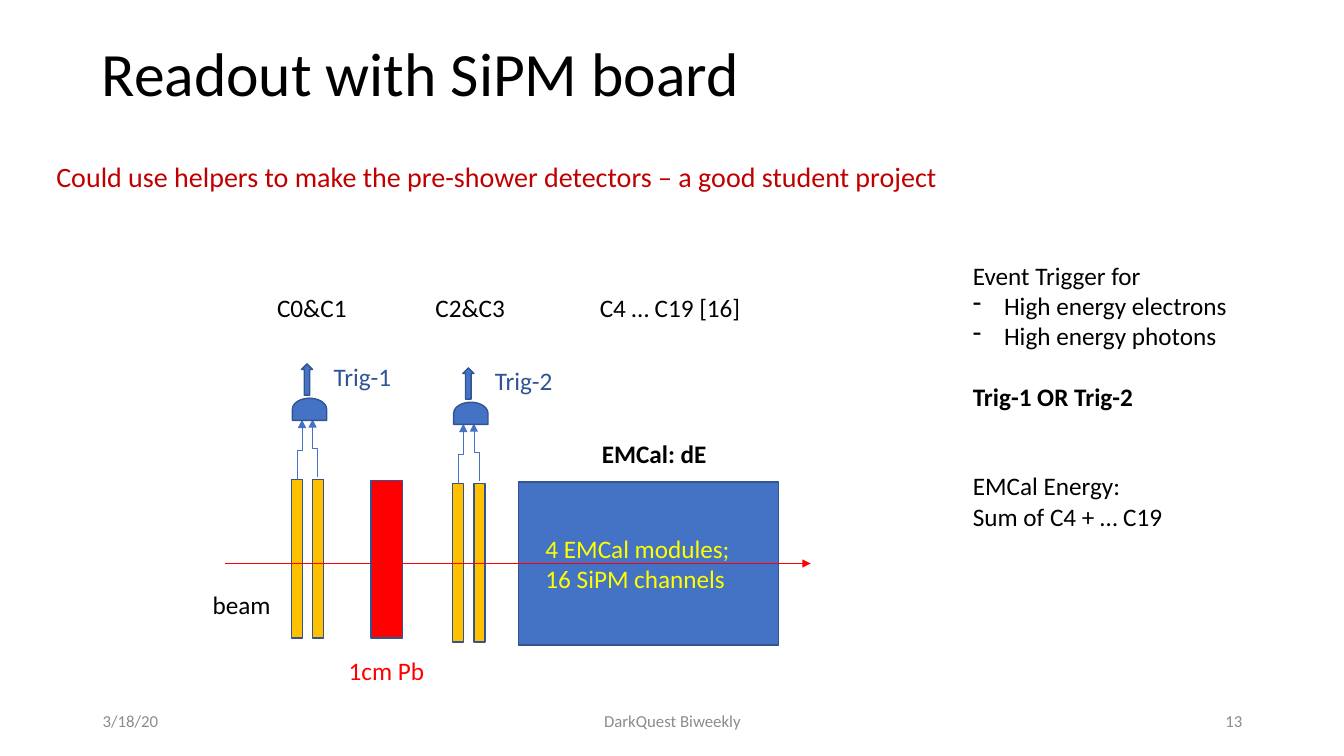
"""Build the detector readout slide with its trigger diagram."""
from pptx import Presentation
from pptx.dml.color import RGBColor
from pptx.enum.shapes import MSO_CONNECTOR as Connector, MSO_SHAPE as Shape
from pptx.enum.text import MSO_ANCHOR as Anchor, PP_ALIGN as Align
from pptx.oxml.ns import qn
from pptx.util import Inches, Pt
from lxml.etree import SubElement

BLACK = RGBColor(0x00, 0x00, 0x00)
GRAY = RGBColor(0x8C, 0x8C, 0x8C)
RED = RGBColor(0xFF, 0x00, 0x00)
DARK_RED = RGBColor(0xC0, 0x00, 0x00)
BLUE = RGBColor(0x44, 0x72, 0xC4)
OUTLINE = RGBColor(0x32, 0x54, 0x91)
LABEL_BLUE = RGBColor(0x2F, 0x55, 0x97)
GOLD = RGBColor(0xFF, 0xC0, 0x00)
YELLOW = RGBColor(0xFF, 0xFF, 0x00)

presentation = Presentation()
presentation.slide_width = Inches(13.33)
presentation.slide_height = Inches(7.5)
slide = presentation.slides.add_slide(presentation.slide_layouts[6])


def write(shape, text, size=18, color=BLACK, bold=False, align=Align.LEFT):
    frame = shape.text_frame
    frame.text = text
    for paragraph in frame.paragraphs:
        paragraph.alignment = align
        for run in paragraph.runs:
            run.font.name = "Calibri"
            run.font.size = Pt(size)
            run.font.bold = bold
            run.font.color.rgb = color
    return frame


def finish_arrow(connector, color):
    connector.line.color.rgb = color
    connector.line.width = Pt(0.5)
    SubElement(connector.line._get_or_add_ln(), qn("a:tailEnd"), type="triangle")
    SubElement(connector._element.spPr, qn("a:effectLst"))


framed_texts = [
    ("Readout with SiPM board", 0.91, 0.03, 11.5, 1.45, 44, BLACK, Align.LEFT),
    ("3/18/20", 0.92, 6.95, 3, 0.4, 12, GRAY, Align.LEFT),
    ("DarkQuest Biweekly", 4.42, 6.95, 4.5, 0.4, 12, GRAY, Align.CENTER),
    ("13", 9.42, 6.95, 3, 0.4, 12, GRAY, Align.RIGHT),
]
for text, left, top, width, height, size, color, align in framed_texts:
    box = slide.shapes.add_textbox(Inches(left), Inches(top), Inches(width), Inches(height))
    frame = write(box, text, size, color, align=align)
    frame.word_wrap = True
    frame.vertical_anchor = Anchor.MIDDLE
    frame.paragraphs[0].line_spacing = 0.9 if size == 44 else 1.0

station_x, station_y = 2.89, 4.76
station_step_x, station_step_y = 1.6, 0.04
blocks = [
    (Shape.RECTANGLE, 5.14, 4.78, 2.58, 1.62, BLUE, 0),
    (Shape.RECTANGLE, 3.68, 4.77, 0.31, 1.56, RED, 0),
]
for station in range(2):
    x = station_x + station * station_step_x
    y = station_y + station * station_step_y
    blocks += [
        (Shape.RECTANGLE, x, y, 0.11, 1.57, GOLD, 0),
        (Shape.RECTANGLE, x + 0.21, y, 0.11, 1.57, GOLD, 0),
        (Shape.FLOWCHART_DELAY, x + 0.07, y - 0.87, 0.22, 0.34, BLUE, 270),
        (Shape.RIGHT_ARROW, x, y - 1.05, 0.31, 0.11, BLUE, 270),
    ]
    wires = [
        (x + 0.38, y - 0.27, x - 0.22, y - 0.32, 90),
        (x - 0.05, y - 0.29, x + 0.52, y - 0.34, 270),
    ]
    for begin_x, begin_y, end_x, end_y, angle in wires:
        wire = slide.shapes.add_connector(
            Connector.ELBOW, Inches(begin_x), Inches(begin_y), Inches(end_x), Inches(end_y))
        wire._element.spPr.find(qn("a:xfrm")).set("rot", str(angle * 60000))
        finish_arrow(wire, BLUE)

diagram = []
for kind, left, top, width, height, color, angle in blocks:
    shape = slide.shapes.add_shape(kind, Inches(left), Inches(top), Inches(width), Inches(height))
    shape.shadow.inherit = False
    shape.rotation = angle
    shape.fill.solid()
    shape.fill.fore_color.rgb = color
    shape.line.color.rgb = OUTLINE
    shape.line.width = Pt(1)
    diagram.append(shape)

calorimeter_text = write(diagram[0], "4 EMCal modules;\n16 SiPM channels", color=YELLOW)
calorimeter_text.margin_left = Inches(0.27)
calorimeter_text.vertical_anchor = Anchor.MIDDLE

beam = slide.shapes.add_connector(
    Connector.STRAIGHT, Inches(2.23), Inches(5.59), Inches(8.04), Inches(5.59))
finish_arrow(beam, RED)

trigger_text = ("Event Trigger for\nHigh energy electrons\nHigh energy photons\n"
                "Trig-1 OR Trig-2")
labels = [
    ("beam", 2.01, 5.8, 0.78, 0.4, 18, BLACK, False),
    ("Trig-1", 3.21, 3.54, 0.78, 0.4, 18, LABEL_BLUE, False),
    ("Trig-2", 4.81, 3.58, 0.78, 0.4, 18, LABEL_BLUE, False),
    ("1cm Pb", 3.36, 6.45, 0.96, 0.4, 18, RED, False),
    ("EMCal: dE", 5.87, 4.3, 1.25, 0.4, 18, BLACK, True),
    ("C0&C1", 2.65, 2.85, 0.9, 0.4, 18, BLACK, False),
    ("C2&C3", 4.22, 2.85, 0.9, 0.4, 18, BLACK, False),
    ("C4 … C19 [16]", 5.85, 2.85, 1.61, 0.4, 18, BLACK, False),
    ("EMCal Energy:\nSum of C4 + … C19", 9.55, 4.62, 2.11, 0.71, 18, BLACK, False),
    ("Could use helpers to make the pre-shower detectors – a good student project",
     0.46, 1.53, 9.02, 0.44, 20, DARK_RED, False),
    (trigger_text, 9.55, 2.53, 2.75, 1.62, 18, BLACK, False),
]
for text, left, top, width, height, size, color, bold in labels:
    box = slide.shapes.add_textbox(Inches(left), Inches(top), Inches(width), Inches(height))
    frame = write(box, text, size, color, bold)
    frame.word_wrap = False

trigger_lines = frame.paragraphs
for paragraph in trigger_lines[1:3]:
    properties = paragraph._p.get_or_add_pPr()
    properties.set("marL", str(Inches(0.31)))
    properties.set("indent", str(-Inches(0.31)))
    SubElement(properties, qn("a:buChar"), char="-")
trigger_lines[3].space_before = Pt(22)
trigger_lines[3].runs[0].font.bold = True

presentation.save("out.pptx")
